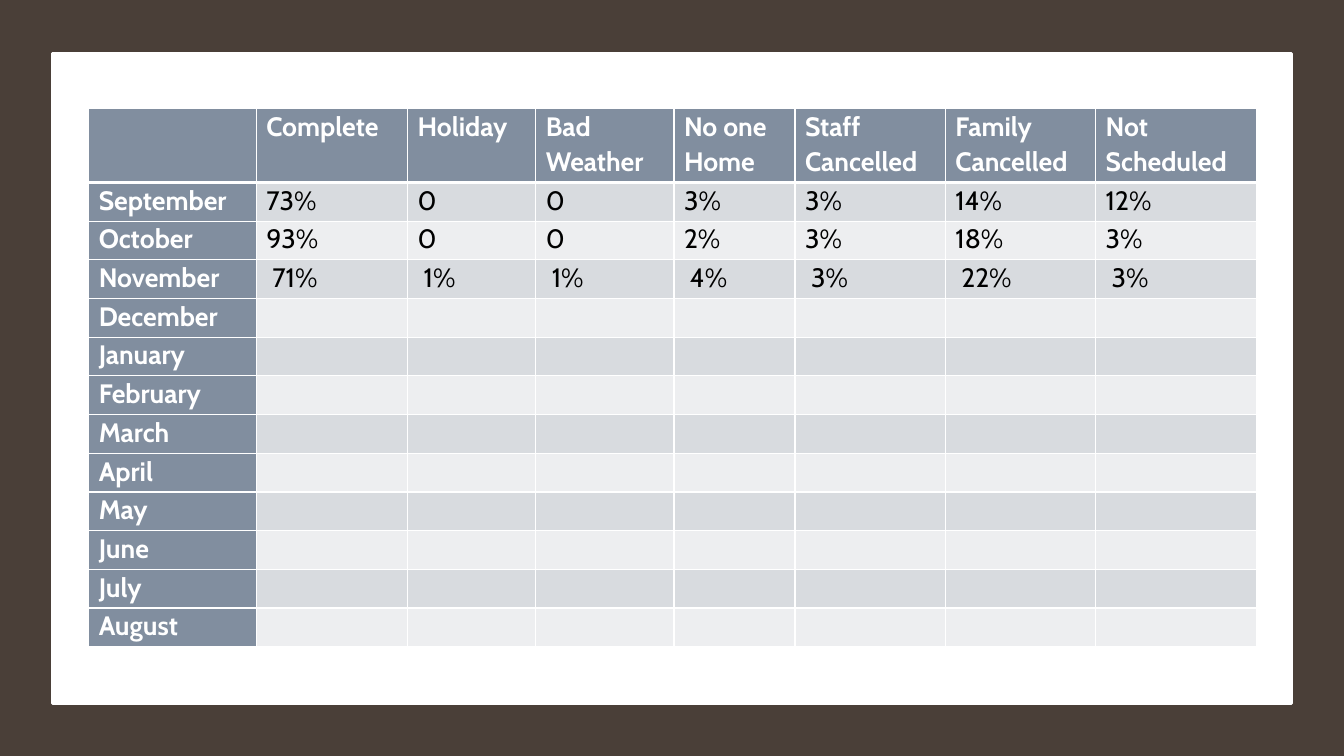
from dataclasses import dataclass

from lxml.etree import SubElement
from pptx import Presentation
from pptx.dml.color import RGBColor
from pptx.enum.shapes import MSO_SHAPE
from pptx.oxml.ns import qn
from pptx.util import Inches, Pt


@dataclass(frozen=True)
class Theme:
    backdrop: str = "000000"
    frame: str = "4A3F38"
    paper: str = "FFFFFF"
    heading: str = "818E9F"
    bands: tuple = ("D8DBDF", "EDEEF0")
    heading_text: str = "FFFFFF"
    body_text: str = "000000"
    font: str = "Cabin"
    size: float = 19
    line_spacing: float = 1.07
    rule: float = 1
    heading_rule: float = 3
    paper_rule: float = 2.5


@dataclass(frozen=True)
class Box:
    left: float
    top: float
    width: float
    height: float

    def inches(self):
        return [Inches(v) for v in (self.left, self.top, self.width, self.height)]


THEME = Theme()
SLIDE = Box(0, 0, 13.33, 7.5)
COLUMN_WEIGHTS = [1.66, 1.5, 1.27, 1.37, 1.2, 1.49, 1.49, 1.59]
HEADING_HEIGHT = 0.73
OUTCOMES = ["Complete", "Holiday", "Bad Weather", "No one Home",
            "Staff Cancelled", "Family Cancelled", "Not Scheduled"]
MONTHS = ["September", "October", "November", "December", "January", "February",
          "March", "April", "May", "June", "July", "August"]
RATES = {
    "September": ["73%", "0", "0", "3%", "3%", "14%", "12%"],
    "October": ["93%", "0", "0", "2%", "3%", "18%", "3%"],
    "November": [" 71%", " 1%", " 1%", " 4%", " 3%", " 22%", " 3%"],
}


def rgb(value):
    return RGBColor.from_string(value)


def write(frame, text, color=THEME.body_text, bold=False):
    paragraph = frame.paragraphs[0]
    paragraph.line_spacing = THEME.line_spacing
    run = paragraph.add_run()
    run.text = text
    run.font.name = THEME.font
    run.font.size = Pt(THEME.size)
    run.font.bold = bold
    run.font.color.rgb = rgb(color)


def add_panel(slide, box, fill, rule=0):
    panel = slide.shapes.add_shape(MSO_SHAPE.RECTANGLE, *box.inches())
    panel.shadow.inherit = False
    panel.fill.solid()
    panel.fill.fore_color.rgb = rgb(fill)
    if rule:
        panel.line.color.rgb = rgb(fill)
        panel.line.width = Pt(rule)
    else:
        panel.line.fill.background()


def rule_cell(cell, top, bottom):
    properties = cell._tc.get_or_add_tcPr()
    widths = {"a:lnL": THEME.rule, "a:lnR": THEME.rule, "a:lnT": top, "a:lnB": bottom}
    for side, width in widths.items():
        edge = SubElement(properties, qn(side), w=str(Pt(width)))
        fill = SubElement(edge, qn("a:solidFill"))
        SubElement(fill, qn("a:srgbClr"), val=THEME.paper)


def style_cell(cell, row, column):
    is_heading = row == 0 or column == 0
    cell.margin_left = cell.margin_right = Inches(0.1)
    cell.margin_top = cell.margin_bottom = 0
    rule_cell(cell,
              THEME.heading_rule if row == 1 else THEME.rule,
              THEME.heading_rule if row == 0 else THEME.rule)
    cell.fill.solid()
    cell.fill.fore_color.rgb = rgb(
        THEME.heading if is_heading else THEME.bands[(row - 1) % 2])
    return is_heading


def add_visit_table(slide, box):
    blank = [""] * len(OUTCOMES)
    records = [["", *OUTCOMES]] + [[month, *RATES.get(month, blank)] for month in MONTHS]
    visits = slide.shapes.add_table(len(records), len(COLUMN_WEIGHTS), *box.inches()).table
    for column, weight in zip(visits.columns, COLUMN_WEIGHTS):
        column.width = Inches(box.width * weight / sum(COLUMN_WEIGHTS))
    month_height = (box.height - HEADING_HEIGHT) / len(MONTHS)
    for r, record in enumerate(records):
        visits.rows[r].height = Inches(month_height if r else HEADING_HEIGHT)
        for c, text in enumerate(record):
            cell = visits.cell(r, c)
            is_heading = style_cell(cell, r, c)
            if text:
                write(cell.text_frame, text, bold=is_heading,
                      color=THEME.heading_text if is_heading else THEME.body_text)


def add_visit_slide(deck, box):
    slide = deck.slides.add_slide(deck.slide_layouts[6])
    slide.background.fill.solid()
    slide.background.fill.fore_color.rgb = rgb(THEME.backdrop)
    add_panel(slide, box, THEME.frame)
    add_panel(slide, Box(box.left + 0.52, box.top + 0.53, box.width - 1.04, box.height - 1.05),
              THEME.paper, rule=THEME.paper_rule)
    add_visit_table(slide, Box(box.left + 0.88, box.top + 1.08,
                               box.width - 1.75, box.height - 2.16))


def main():
    deck = Presentation()
    deck.slide_width = Inches(SLIDE.width)
    deck.slide_height = Inches(SLIDE.height)
    add_visit_slide(deck, SLIDE)
    deck.save("out.pptx")


if __name__ == "__main__":
    main()
